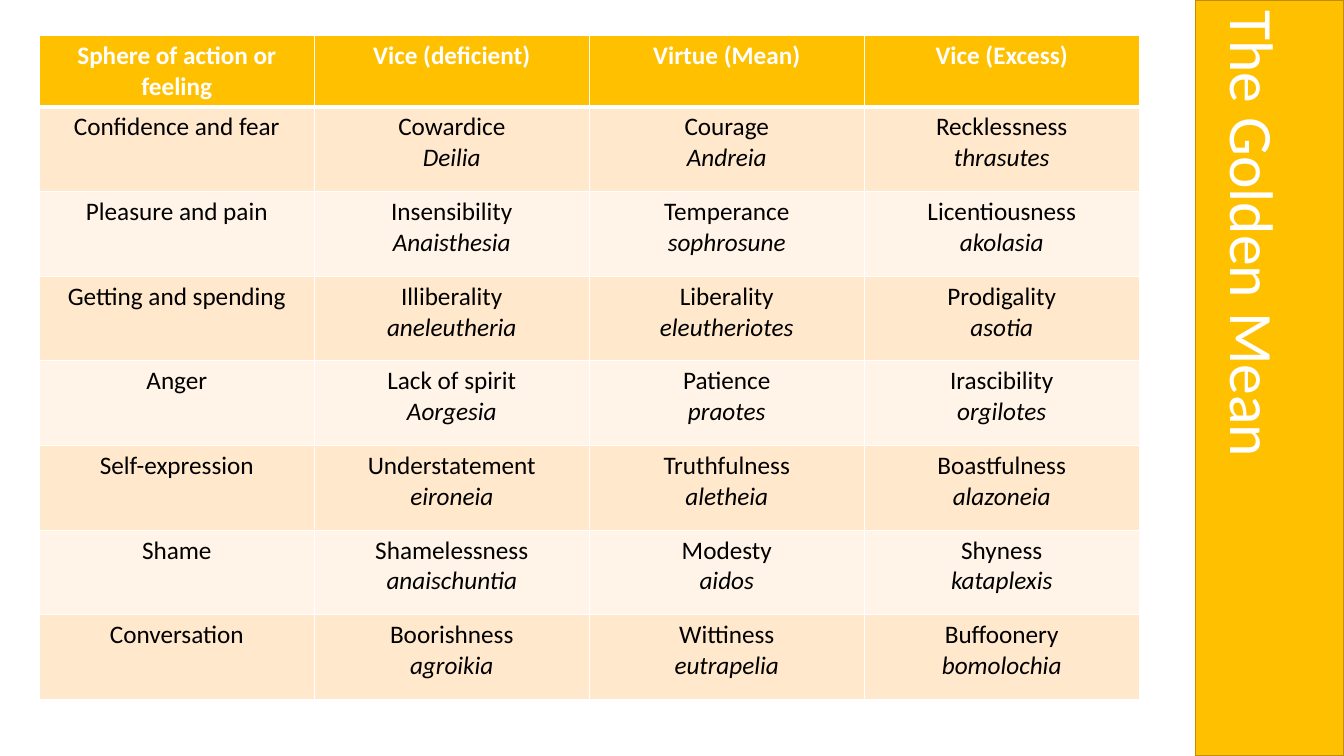
from lxml import etree
from pptx import Presentation
from pptx.dml.color import RGBColor
from pptx.enum.shapes import MSO_SHAPE
from pptx.enum.text import MSO_ANCHOR, MSO_AUTO_SIZE, PP_ALIGN
from pptx.oxml.ns import qn
from pptx.util import Pt

RECT = MSO_SHAPE.RECTANGLE
LEFT, CENTER = PP_ALIGN.LEFT, PP_ALIGN.CENTER
MIDDLE = MSO_ANCHOR.MIDDLE
NO_FIT = MSO_AUTO_SIZE.NONE
SCALE = 9144

HEADS = ["Sphere of action or feeling", "Vice (deficient)", "Virtue (Mean)", "Vice (Excess)"]
SPHERES = [
    ["Confidence and fear", "Cowardice|Deilia", "Courage|Andreia", "Recklessness|thrasutes"],
    ["Pleasure and pain", "Insensibility|Anaisthesia", "Temperance|sophrosune", "Licentiousness|akolasia"],
    ["Getting and spending", "Illiberality|aneleutheria", "Liberality|eleutheriotes", "Prodigality|asotia"],
    ["Anger", "Lack of spirit|Aorgesia", "Patience|praotes", "Irascibility|orgilotes"],
    ["Self-expression", "Understatement|eironeia", "Truthfulness|aletheia", "Boastfulness|alazoneia"],
    ["Shame", "Shamelessness|anaischuntia", "Modesty|aidos", "Shyness|kataplexis"],
    ["Conversation", "Boorishness|agroikia", "Wittiness|eutrapelia", "Buffoonery|bomolochia"],
]


def px(n):
    return n * SCALE


def color(code):
    return RGBColor.from_string(code)


class Board:
    font = "Calibri"
    gold, edge, white, black = "FFC000", "BD8E00", "FFFFFF", "000000"
    bands = ["FFE8CC", "FFF4E7"]

    def __init__(self, slide):
        self.slide = slide

    def run(self, para, text, size, ink, bold=False, italic=False):
        run = para.add_run()
        run.text = text
        font = run.font
        font.name, font.size = self.font, Pt(size)
        font.bold, font.italic = bold, italic
        font.color.rgb = color(ink)

    def place(self, shape, x, y, w, h):
        shape.left, shape.top = px(x), px(y)
        shape.width, shape.height = px(w), px(h)

    def title(self, text, x, y, w, h):
        title = self.slide.shapes.title
        self.place(title, x, y, w, h)
        title.rotation = 90
        frame = title.text_frame
        frame.auto_size = NO_FIT
        frame.word_wrap = True
        frame.vertical_anchor = MIDDLE
        para = frame.paragraphs[0]
        para.alignment = LEFT
        para.line_spacing = 0.9
        self.run(para, text, 44, self.white)

    def panel(self, x, y, w, h):
        panel = self.slide.shapes.add_shape(RECT, px(x), px(y), px(w), px(h))
        panel.shadow.inherit = False
        panel.fill.solid()
        panel.fill.fore_color.rgb = color(self.gold)
        panel.line.color.rgb = color(self.edge)
        panel.line.width = Pt(1)
        self.slide.shapes.title.element.addprevious(panel.element)

    def border(self, cell, top, bottom):
        props = cell._tc.get_or_add_tcPr()
        sides = [("L", 1), ("R", 1), ("T", top), ("B", bottom)]
        for spot, (side, width) in enumerate(sides):
            line = etree.Element(qn(f"a:ln{side}"), w=str(Pt(width)))
            fill = etree.SubElement(line, qn("a:solidFill"))
            etree.SubElement(fill, qn("a:srgbClr"), val=self.white)
            props.insert(spot, line)

    def cell(self, cell, text, row):
        head = row == 0
        cell.fill.solid()
        cell.fill.fore_color.rgb = color(self.gold if head else self.bands[(row - 1) % 2])
        self.border(cell, 3 if row == 1 else 1, 3 if head else 1)
        frame = cell.text_frame
        for index, part in enumerate(text.split("|")):
            para = frame.add_paragraph() if index else frame.paragraphs[0]
            para.alignment = CENTER
            self.run(para, part, 18, self.white if head else self.black, head, index > 0)

    def table(self, rows, x, y, w, h, first, rest):
        count = len(rows[0])
        frame = self.slide.shapes.add_table(len(rows), count, px(x), px(y), px(w), px(h))
        table = frame.table
        for column in table.columns:
            column.width = px(w) // count
        for r, texts in enumerate(rows):
            table.rows[r].height = px(rest if r else first)
            for c, text in enumerate(texts):
                self.cell(table.cell(r, c), text, r)
        self.place(frame, x, y, w, h)


def main():
    deck = Presentation()
    deck.slide_width, deck.slide_height = px(1333), px(750)
    board = Board(deck.slides.add_slide(deck.slide_layouts[5]))
    board.panel(1186, 0, 147, 750)
    board.title("The Golden Mean", 865, 282, 750, 186)
    board.table([HEADS] + SPHERES, 39, 35, 1091, 655, 43, 84)
    deck.save("out.pptx")


if __name__ == "__main__":
    main()
